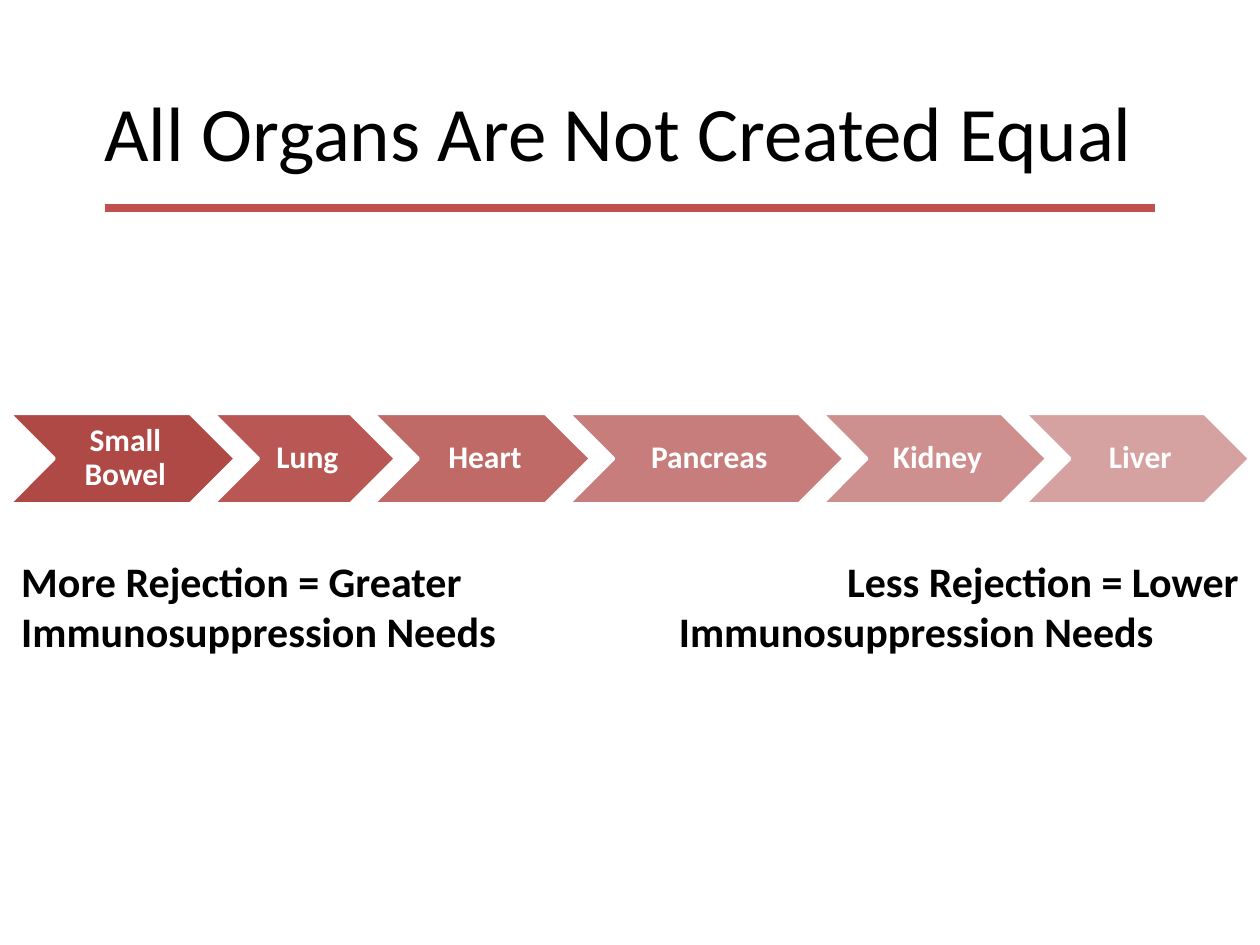
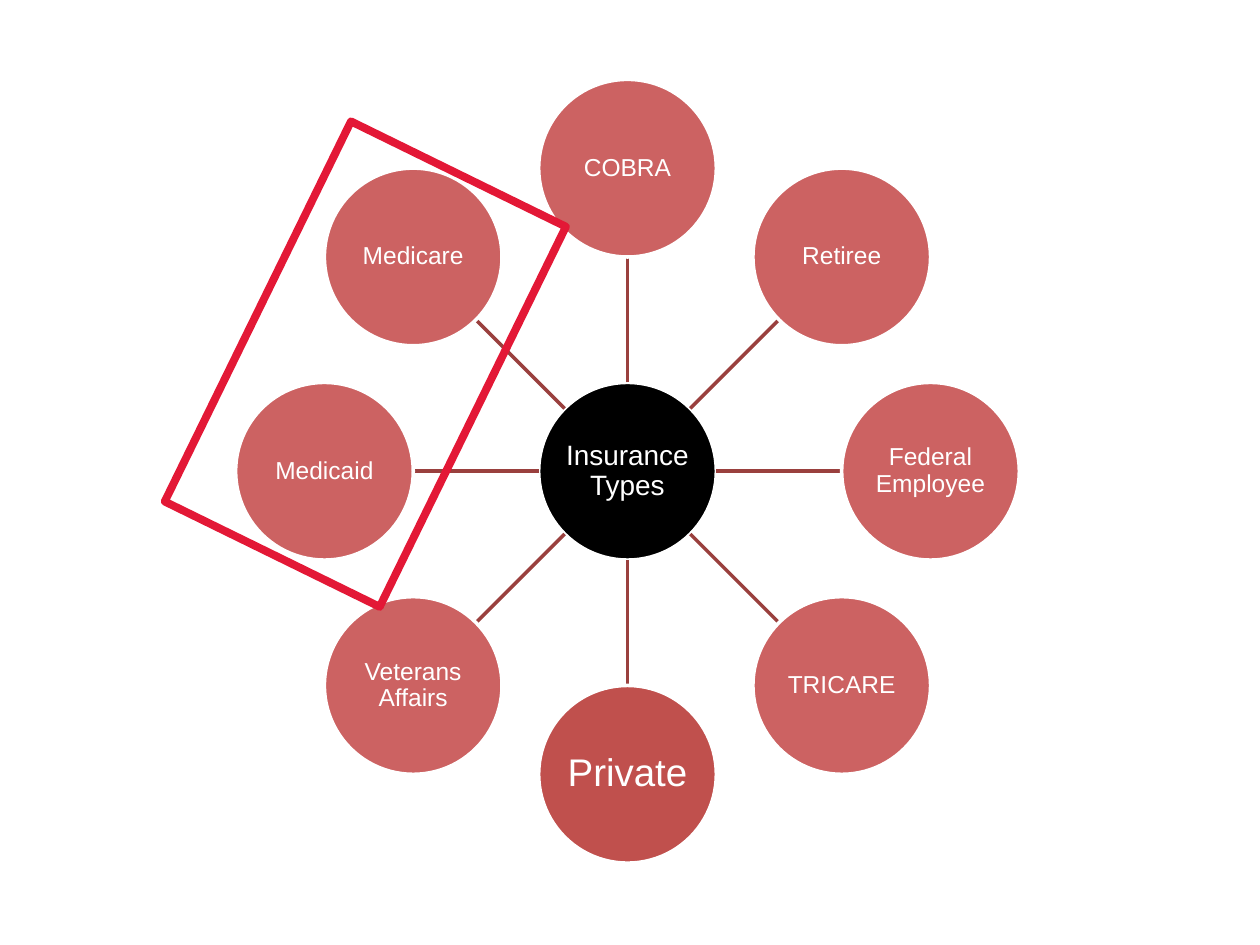
from dataclasses import dataclass
from math import cos, radians, sin
from typing import Any

from lxml.etree import SubElement
from pptx import Presentation
from pptx.dml.color import RGBColor
from pptx.enum.shapes import MSO_CONNECTOR, MSO_SHAPE
from pptx.enum.text import MSO_ANCHOR, MSO_AUTO_SIZE, PP_ALIGN
from pptx.oxml.ns import qn
from pptx.util import Inches, Length, Pt

# The slide is a grid of 100 columns by 75 rows of square cells.
COLUMNS, ROWS = 100, 75
CELL = Inches(0.1)

BLACK = RGBColor(0x00, 0x00, 0x00)
WHITE = RGBColor(0xFF, 0xFF, 0xFF)
BRICK = RGBColor(0xC0, 0x50, 0x4D)
ROSE = RGBColor(0xCC, 0x62, 0x62)
SPOKE_RED = RGBColor(0x9A, 0x40, 0x3E)
FRAME_RED = RGBColor(0xE3, 0x18, 0x36)

FRAME_FORMAT = {"word_wrap": True, "auto_size": MSO_AUTO_SIZE.NONE}
MIDDLE = {**FRAME_FORMAT, "vertical_anchor": MSO_ANCHOR.MIDDLE}
CHEVRON_INSETS = {"margin_left": Inches(0.08), "margin_right": Inches(0.03),
                  "margin_top": Inches(0.03), "margin_bottom": Inches(0.03)}
CIRCLE_INSETS = dict.fromkeys(CHEVRON_INSETS, Inches(0.01))
TITLE_INSETS = dict.fromkeys(CHEVRON_INSETS, Inches(0.1))

TITLE_FONT = {"name": "Calibri", "size": Pt(44)}
ORGAN_FONT = {"name": "Calibri", "size": Pt(18), "bold": True}
NEED_FONT = {"name": "Calibri", "size": Pt(24), "bold": True}
CENTERED = {"alignment": PP_ALIGN.CENTER}
TIGHT = {**CENTERED, "line_spacing": 0.9}


@dataclass(frozen=True)
class Box:
    left: float
    top: float
    width: float
    height: float

    def lengths(self) -> tuple[Length, ...]:
        return tuple(cells(n) for n in (self.left, self.top, self.width, self.height))


@dataclass(frozen=True)
class Organ:
    name: str
    pitch: float
    color: RGBColor


@dataclass(frozen=True)
class Insurance:
    name: str
    color: RGBColor = ROSE
    size: int = 14


ORGANS = [
    Organ("Small Bowel", 16.2, RGBColor(0xAE, 0x49, 0x46)),
    Organ("Lung", 12.7, RGBColor(0xB9, 0x57, 0x55)),
    Organ("Heart", 15.5, RGBColor(0xC0, 0x6A, 0x68)),
    Organ("Pancreas", 20.1, RGBColor(0xC7, 0x7D, 0x7C)),
    Organ("Kidney", 16.1, RGBColor(0xCE, 0x90, 0x8F)),
    Organ("Liver", 16.1, RGBColor(0xD6, 0xA2, 0xA1)),
]
HUB = Insurance("Insurance Types", BLACK, 16)
INSURANCES = [  # clockwise from the top
    Insurance("COBRA"),
    Insurance("Retiree"),
    Insurance("Federal Employee"),
    Insurance("TRICARE"),
    Insurance("Private", BRICK, 22),
    Insurance("Veterans Affairs"),
    Insurance("Medicaid"),
    Insurance("Medicare"),
]


def cells(count: float) -> Length:
    return Length(round(count * CELL))


def apply(target: Any, values: dict[str, Any]) -> None:
    for attribute, value in values.items():
        setattr(target, attribute, value)


def write(paragraph: Any, text: str, font: dict[str, Any], color: RGBColor,
          layout: dict[str, Any]) -> None:
    apply(paragraph, layout)
    run = paragraph.add_run()
    run.text = text
    apply(run.font, font)
    run.font.color.rgb = color


def add_labelled(slide: Any, kind: MSO_SHAPE, box: Box, fill: RGBColor, text: str,
                 font: dict[str, Any], insets: dict[str, Length]) -> None:
    """Draw a filled shape with a white edge and centred white text."""
    shape = slide.shapes.add_shape(kind, *box.lengths())
    shape.shadow.inherit = False
    shape.fill.solid()
    shape.fill.fore_color.rgb = fill
    shape.line.color.rgb = WHITE
    shape.line.width = Pt(2)
    apply(shape.text_frame, {**MIDDLE, **insets})
    write(shape.text_frame.paragraphs[0], text, font, WHITE, TIGHT)


def add_line(slide: Any, start: tuple[float, float], end: tuple[float, float],
             color: RGBColor, width: float) -> None:
    line = slide.shapes.add_connector(
        MSO_CONNECTOR.STRAIGHT, *(cells(n) for n in (*start, *end)))
    line.line.color.rgb = color
    line.line.width = Pt(width)
    SubElement(line._element.spPr, qn("a:effectLst"))


def add_title(slide: Any, text: str) -> None:
    title = slide.shapes.title
    left, top, width, height = Box(4.1, 4.9, 90, 10.9).lengths()
    apply(title, {"left": left, "top": top, "width": width, "height": height})
    apply(title.text_frame, {**MIDDLE, **TITLE_INSETS})
    write(title.text_frame.paragraphs[0], text, TITLE_FONT, BLACK, CENTERED)
    margin = COLUMNS / 12
    add_line(slide, (margin, 16.5), (COLUMNS - margin, 16.5), BRICK, 4.5)


def add_need(slide: Any, box: Box) -> Any:
    """Return the frame of an empty caption below the chevrons."""
    frame = slide.shapes.add_textbox(*box.lengths()).text_frame
    apply(frame, FRAME_FORMAT)
    return frame


def build_organs(prs: Any) -> None:
    slide = prs.slides.add_slide(prs.slide_layouts[5])
    add_title(slide, "All Organs Are Not Created Equal")
    left, height = 0.7, 7.2
    overlap = height / 4
    for organ in ORGANS:
        box = Box(left, 32.8, organ.pitch + overlap, height)
        add_labelled(slide, MSO_SHAPE.CHEVRON, box, organ.color, organ.name,
                     ORGAN_FONT, CHEVRON_INSETS)
        left += organ.pitch

    more = add_need(slide, Box(0.7, 43.6, 47.9, 9.1))
    write(more.paragraphs[0], "More Rejection = Greater Immunosuppression Needs",
          NEED_FONT, BLACK, {"alignment": PP_ALIGN.LEFT})
    less = add_need(slide, Box(52.4, 43.6, 46.9, 9.1))
    write(less.paragraphs[0], "Less Rejection = Lower",
          NEED_FONT, BLACK, {"alignment": PP_ALIGN.RIGHT})
    second_line = less.add_paragraph()
    second_line._p.get_or_add_pPr().set("marL", str(cells(0.5)))
    write(second_line, "Immunosuppression Needs",
          NEED_FONT, BLACK, {"alignment": PP_ALIGN.LEFT})


def build_insurances(prs: Any) -> None:
    slide = prs.slides.add_slide(prs.slide_layouts[6])
    hub_x, hub_y = 49.8, 37.4
    diameter, orbit = 14.1, 24.05
    radius = diameter / 2

    def point(angle: float, distance: float) -> tuple[float, float]:
        return hub_x + distance * sin(angle), hub_y - distance * cos(angle)

    def add_circle(insurance: Insurance, x: float, y: float) -> None:
        box = Box(x - radius, y - radius, diameter, diameter)
        add_labelled(slide, MSO_SHAPE.OVAL, box, insurance.color, insurance.name,
                     {"name": "Arial", "size": Pt(insurance.size)}, CIRCLE_INSETS)

    add_circle(HUB, hub_x, hub_y)
    for index, insurance in enumerate(INSURANCES):
        angle = radians(360 / len(INSURANCES) * index)
        add_line(slide, point(angle, radius), point(angle, orbit - radius), SPOKE_RED, 2)
        add_circle(insurance, *point(angle, orbit))

    highlight = slide.shapes.add_shape(MSO_SHAPE.RECTANGLE,
                                       *Box(19.5, 12.1, 19, 33.6).lengths())
    highlight.shadow.inherit = False
    highlight.rotation = 26.1
    highlight.fill.background()
    highlight.line.color.rgb = FRAME_RED
    highlight.line.width = Pt(4.5)


def main() -> None:
    prs = Presentation()
    prs.slide_width, prs.slide_height = cells(COLUMNS), cells(ROWS)
    build_organs(prs)
    build_insurances(prs)
    prs.save("out.pptx")


if __name__ == "__main__":
    main()
